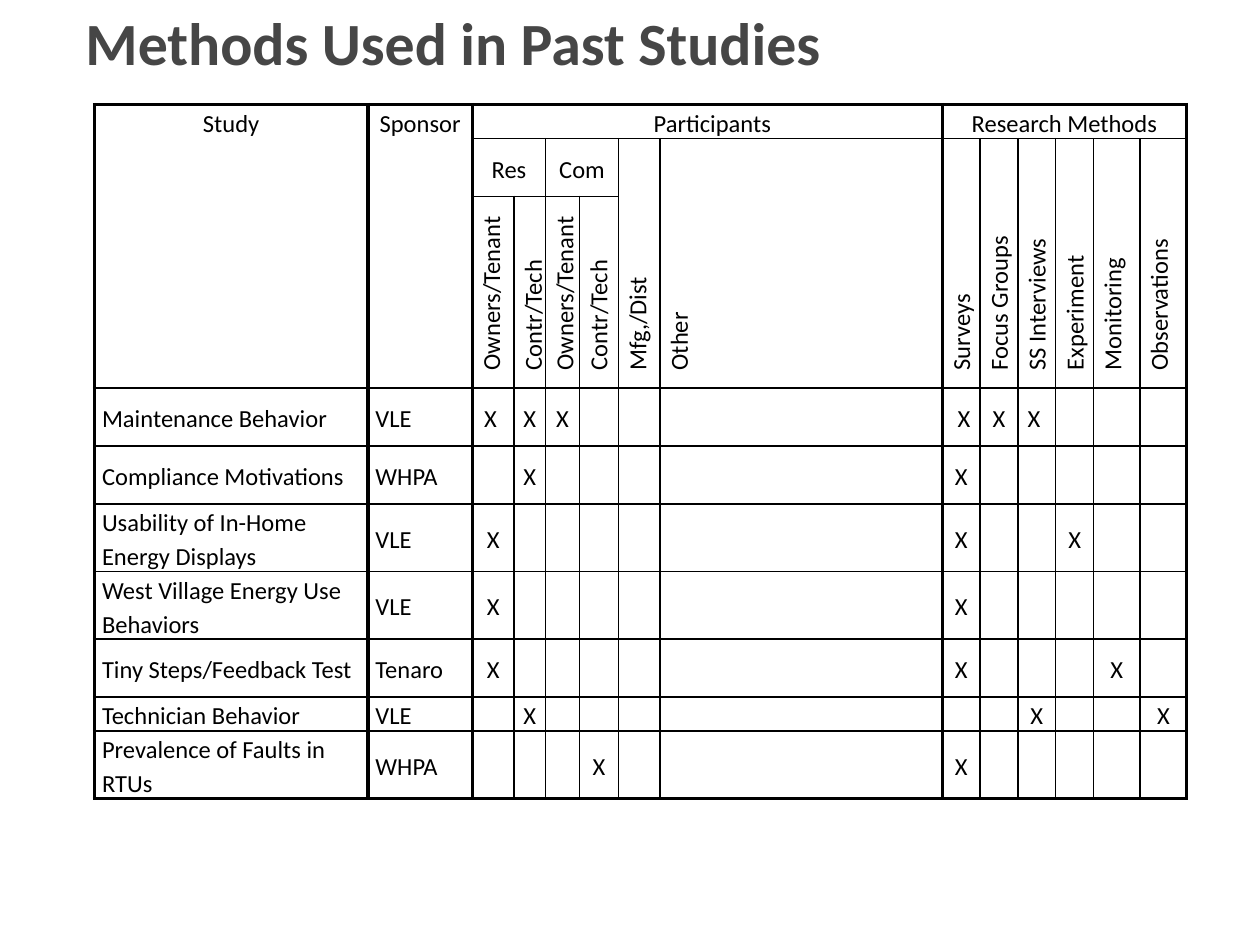
from lxml import etree
from pptx import Presentation
from pptx.dml.color import RGBColor
from pptx.enum.text import MSO_ANCHOR, PP_ALIGN
from pptx.oxml.ns import qn
from pptx.util import Inches, Pt

TOP, MIDDLE = MSO_ANCHOR.TOP, MSO_ANCHOR.MIDDLE
LEFT, CENTER = PP_ALIGN.LEFT, PP_ALIGN.CENTER
TITLE_GRAY = RGBColor(0x46, 0x46, 0x46)
BLACK = RGBColor(0x00, 0x00, 0x00)
FONT = "Calibri"
NO_STYLE = "{2D5ABB26-0587-4C30-8999-92F81FD0307C}"

COLUMN_WIDTHS = [2.17, 0.83, 0.33, 0.25, 0.27, 0.31, 0.33, 2.24] + [0.3] * 4 + [0.37] * 2
ROW_HEIGHTS = [0.27, 0.46, 1.52] + [0.46] * 5 + [0.23, 0.46]
HEAVY_COLUMN_EDGES = {0, 1, 2, 8, 14}
HEAVY_ROW_EDGES = {0, 10}

GROUP_HEADINGS = [
    (0, 0, 3, 1, "Study"),
    (0, 1, 3, 1, "Sponsor"),
    (0, 2, 1, 6, "Participants"),
    (0, 8, 1, 6, "Research Methods"),
    (1, 2, 1, 2, "Res"),
    (1, 4, 1, 2, "Com"),
]
TALL_HEADINGS = [
    "Mfg,/Dist", "Other", "Surveys", "Focus Groups",
    "SS Interviews", "Experiment", "Monitoring", "Observations",
]
ROLE_HEADINGS = ["Owners/Tenant", "Contr/Tech"] * 2
STUDIES = [
    ("Maintenance Behavior", "VLE", {2: "X ", 3: "X", 4: "X", 8: " X", 9: "X", 10: "X "}),
    ("Compliance Motivations", "WHPA", {3: "X", 8: "X"}),
    ("Usability of In-Home Energy Displays", "VLE", {2: "X", 8: "X", 11: "X"}),
    ("West Village Energy Use Behaviors", "VLE", {2: "X", 8: "X"}),
    ("Tiny Steps/Feedback Test", "Tenaro", {2: "X", 8: "X", 12: "X"}),
    ("Technician Behavior", "VLE", {3: "X", 10: "X", 13: "X"}),
    ("Prevalence of Faults in RTUs", "WHPA", {5: "X", 8: "X"}),
]


def write(para, text, size, color, bold=False):
    span = para.add_run()
    span.text = text
    span.font.name = FONT
    span.font.size = Pt(size)
    span.font.bold = bold
    span.font.color.rgb = color


def add_border(cell, side, heavy):
    line = etree.SubElement(cell._tc.get_or_add_tcPr(), qn(f"a:ln{side}"))
    line.set("w", str(Pt(2.25 if heavy else 1)))
    fill = etree.SubElement(line, qn("a:solidFill"))
    etree.SubElement(fill, qn("a:srgbClr"), val=str(BLACK))


deck = Presentation()
deck.slide_width = Inches(10)
deck.slide_height = Inches(7.5)
page = deck.slides.add_slide(deck.slide_layouts[6])

box = page.shapes.add_textbox(Inches(0.58), Inches(0.08), Inches(9), Inches(0.5))
box.text_frame.word_wrap = True
box.text_frame.vertical_anchor = MIDDLE
write(box.text_frame.paragraphs[0], "Methods Used in Past Studies", 34.2, TITLE_GRAY, True)

frame = page.shapes.add_table(
    len(ROW_HEIGHTS), len(COLUMN_WIDTHS), Inches(0.75), Inches(0.83), Inches(8.67), Inches(5.05)
)
table = frame.table
table.first_row = False
table.horz_banding = False
table._tbl.tblPr.find(qn("a:tableStyleId")).text = NO_STYLE
for column, width in zip(table.columns, COLUMN_WIDTHS):
    column.width = Inches(width)
for row, height in zip(table.rows, ROW_HEIGHTS):
    row.height = Inches(height)

entries = {}
regions = {}
merges = [heading[:4] for heading in GROUP_HEADINGS] + [(1, c, 2, 1) for c in range(6, 14)]
for top, left, rows, columns in merges:
    table.cell(top, left).merge(table.cell(top + rows - 1, left + columns - 1))
    for r in range(top, top + rows):
        for c in range(left, left + columns):
            regions[r, c] = (top, left, top + rows, left + columns)

for top, left, rows, columns, text in GROUP_HEADINGS:
    entries[top, left] = text
for c, text in enumerate(TALL_HEADINGS, 6):
    entries[1, c] = text
for c, text in enumerate(ROLE_HEADINGS, 2):
    entries[2, c] = text
vertical_cells = {(1, c) for c in range(6, 14)} | {(2, c) for c in range(2, 6)}
for r, (study, sponsor, marks) in enumerate(STUDIES, 3):
    entries[r, 0] = study
    entries[r, 1] = sponsor
    for c, mark in marks.items():
        entries[r, c] = mark

for r in range(len(ROW_HEIGHTS)):
    for c in range(len(COLUMN_WIDTHS)):
        cell = table.cell(r, c)
        top, left, bottom, right = regions.get((r, c), (r, c, r + 1, c + 1))
        origin = (r, c) == (top, left)
        if origin or c == left:
            add_border(cell, "L", left in HEAVY_COLUMN_EDGES)
        if origin or c + 1 == right:
            add_border(cell, "R", right in HEAVY_COLUMN_EDGES)
        if origin or r == top:
            add_border(cell, "T", top in HEAVY_ROW_EDGES)
        if origin or r + 1 == bottom:
            add_border(cell, "B", bottom in HEAVY_ROW_EDGES)
        cell.fill.background()
        cell.margin_left = cell.margin_right = Inches(0.06)
        cell.margin_top = cell.margin_bottom = 0
        cell.vertical_anchor = TOP if r == 0 else MIDDLE

        para = cell.text_frame.paragraphs[0]
        para.line_spacing = 1.15
        vertical = (r, c) in vertical_cells
        para.alignment = LEFT if vertical or (r > 2 and c < 2) else CENTER
        if vertical:
            cell._tc.tcPr.set("vert", "vert270")
        if vertical or (r, c) == (0, 2):
            para._p.get_or_add_pPr().set("marL", str(Inches(0.08)))
        if (r, c) in entries:
            write(para, entries[r, c], 14, BLACK)
        else:
            etree.SubElement(para._p, qn("a:endParaRPr"), sz="1400")

deck.save("out.pptx")
